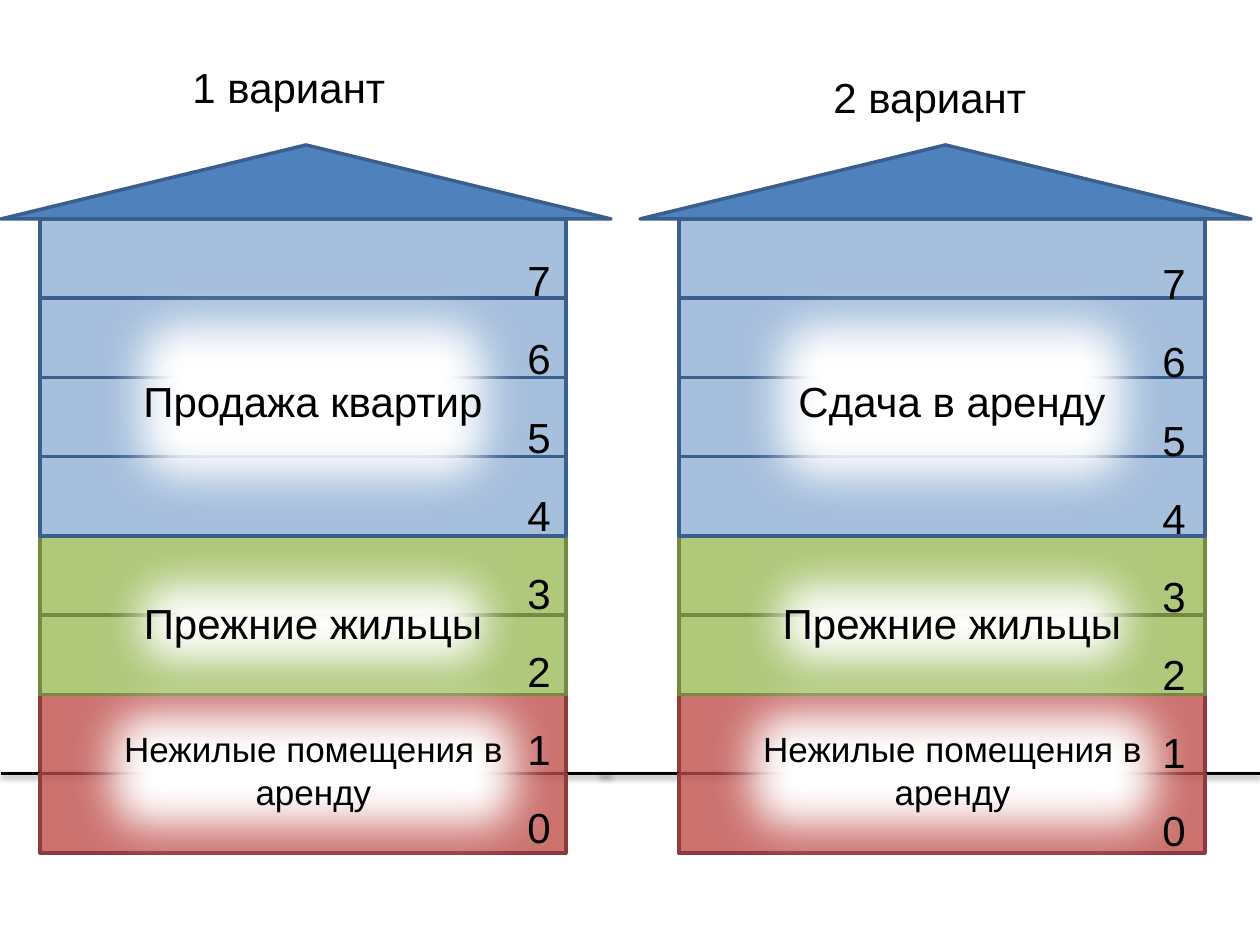
from lxml import etree
from pptx import Presentation
from pptx import util as u
from pptx.dml.color import RGBColor
from pptx.enum import shapes, text
from pptx.oxml import ns

EMU_PER_PX = 914400 / 126
FLOOR_COUNT = 8
BASEMENT, TENANTS, UPPER = ("C0504D", "8E3B39", 80), ("9BBB59", "738A42", 80), ("4F81BD", "3A5F8C", 50)
FLOOR_STYLES = [BASEMENT] * 2 + [TENANTS] * 2 + [UPPER] * 4


def px(length):
    return u.Emu(round(length * EMU_PER_PX))


def box_px(*lengths):
    return [px(length) for length in lengths]


def color(hex_string):
    return RGBColor.from_string(hex_string)


def add_xml(parent, tag, **attributes):
    child = etree.SubElement(parent, ns.qn(tag))
    for name, value in attributes.items():
        child.set(name, str(value))
    return child


def add_effects(item):
    return add_xml(item.element.spPr, "a:effectLst")


def add_solid(parts, preset, box, fill, line=None, opacity=100):
    solid = parts.add_shape(preset, *box_px(*box))
    solid.fill.solid()
    solid.fill.fore_color.rgb = color(fill)
    if opacity < 100:
        add_xml(solid.element.spPr.find(".//" + ns.qn("a:srgbClr")), "a:alpha", val=opacity * 1000)
    if line:
        solid.line.color.rgb = color(line)
        solid.line.width = u.Pt(2)
        solid.shadow.inherit = False
    else:
        solid.line.fill.background()
    return solid


def write_lines(frame, lines, size=24, align=text.PP_ALIGN.CENTER, spacing=None):
    frame.word_wrap = True
    for index, words in enumerate(lines):
        paragraph = frame.add_paragraph() if index else frame.paragraphs[0]
        paragraph.alignment = align
        paragraph.line_spacing = spacing
        run = paragraph.add_run()
        run.text = words
        run.font.size = u.Pt(size)
        run.font.name = "Arial"
        run.font.color.rgb = color("000000")


def add_text(parts, box, lines, **style):
    frame = parts.add_textbox(*box_px(*box)).text_frame
    write_lines(frame, lines, **style)
    frame.auto_size = text.MSO_AUTO_SIZE.SHAPE_TO_FIT_TEXT


def add_glow_label(parts, box, words, size=24):
    """Add a white label that fades out at its edges."""
    label = add_solid(parts, shapes.MSO_SHAPE.ROUNDED_RECTANGLE, box, "FFFFFF")
    add_xml(add_effects(label), "a:softEdge", rad=u.Pt(25))
    label.text_frame.vertical_anchor = text.MSO_ANCHOR.MIDDLE
    write_lines(label.text_frame, [words], size)


def add_ground(parts, start, end, y):
    ground = parts.add_connector(shapes.MSO_CONNECTOR.STRAIGHT, *box_px(start, y, end, y))
    ground.line.color.rgb = color("000000")
    ground.line.width = u.Pt(2)
    shadow = add_xml(add_effects(ground), "a:outerShdw", blurRad=40000, dist=20000,
                     dir=5400000, rotWithShape=0)
    shadow_color = add_xml(shadow, "a:srgbClr", val="000000")
    add_xml(shadow_color, "a:alpha", val=38000)


def add_house(slide, box, title, title_at, usage, numbers_at, ground_span):
    """Draw one option; title_at and numbers_at are offsets within the box."""
    left, top, width, height = box
    roof_height = 74
    body_left, body_top = left + 39, top + roof_height
    floor_height = (height - roof_height) / FLOOR_COUNT
    parts = slide.shapes.add_group_shape().shapes

    def add_floor(number):
        y = body_top + (FLOOR_COUNT - 1 - number) * floor_height
        add_solid(parts, shapes.MSO_SHAPE.RECTANGLE, (body_left, y, 526, floor_height),
                  *FLOOR_STYLES[number])

    for number in range(1, FLOOR_COUNT - 1):
        add_floor(number)
    add_ground(parts, *ground_span, body_top + (FLOOR_COUNT - 1) * floor_height)
    add_floor(FLOOR_COUNT - 1)
    add_solid(parts, shapes.MSO_SHAPE.ISOSCELES_TRIANGLE, (left, top, width, roof_height),
              "4F81BD", "3A5F8C")
    add_floor(0)

    add_glow_label(parts, (left + 98, top + 137, 428, 237), usage)
    add_glow_label(parts, (left + 98, top + 397, 428, 162), "Прежние жильцы")
    add_glow_label(parts, (left + 69, top + 526, 487, 198), "Нежилые помещения в аренду", 20)
    numbers = [str(number) for number in reversed(range(FLOOR_COUNT))]
    add_text(parts, (left + numbers_at[0], top + numbers_at[1], 234, 644), numbers, spacing=1.55)
    add_text(parts, (left + title_at[0], top + title_at[1], 268, 64), [title],
             align=text.PP_ALIGN.LEFT)


def main():
    deck = Presentation()
    deck.slide_width, deck.slide_height = u.Inches(10), u.Inches(7.5)
    slide = deck.slides.add_slide(deck.slide_layouts[6])
    add_house(slide, (1, 145, 610, 708), "1 вариант", (179, -90), "Продажа квартир",
              (421, 76), (1, 611))
    add_house(slide, (640, 145, 611, 708), "2 вариант", (181, -80), "Сдача в аренду",
              (417, 79), (600, 1260))
    deck.save("out.pptx")


if __name__ == "__main__":
    main()
